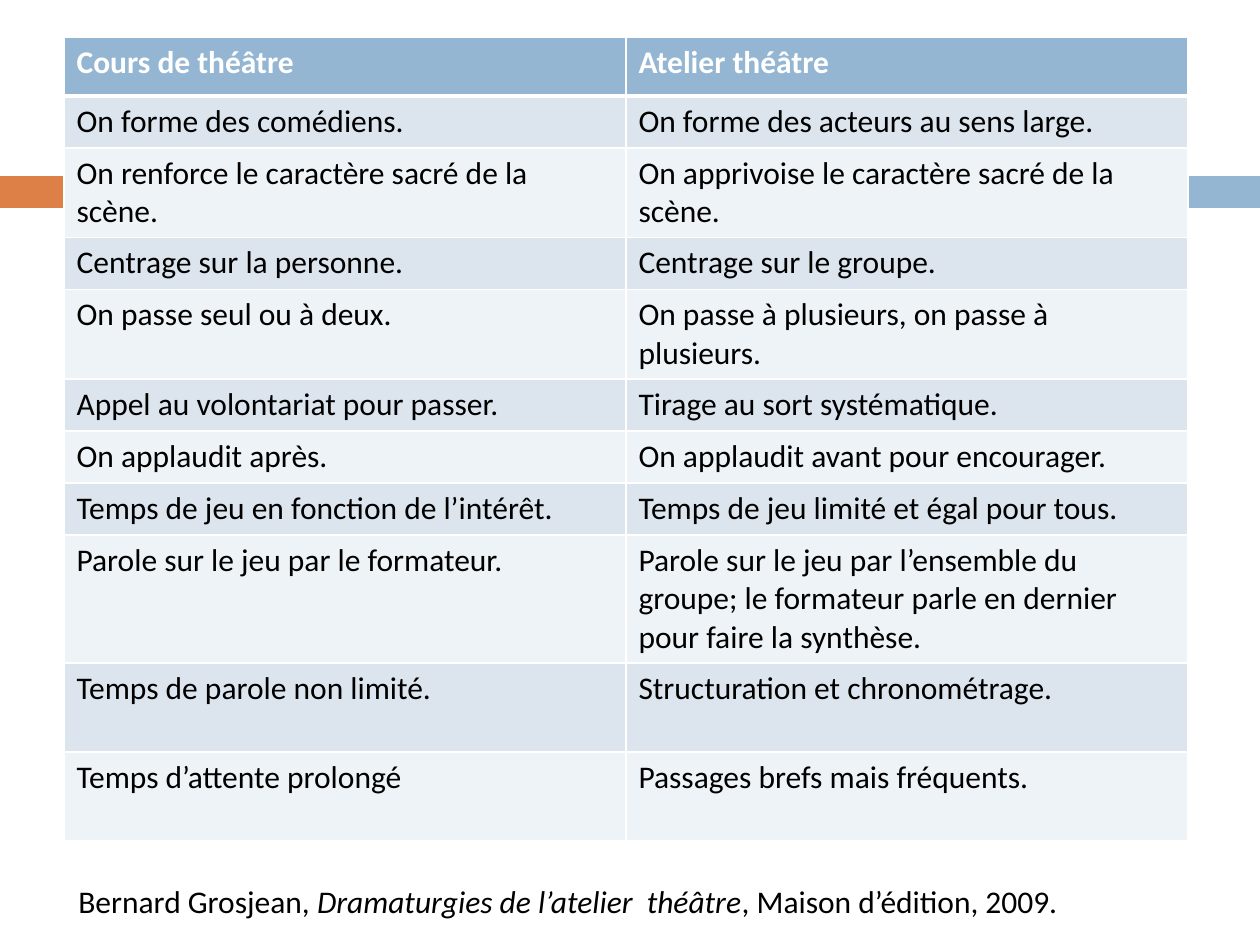
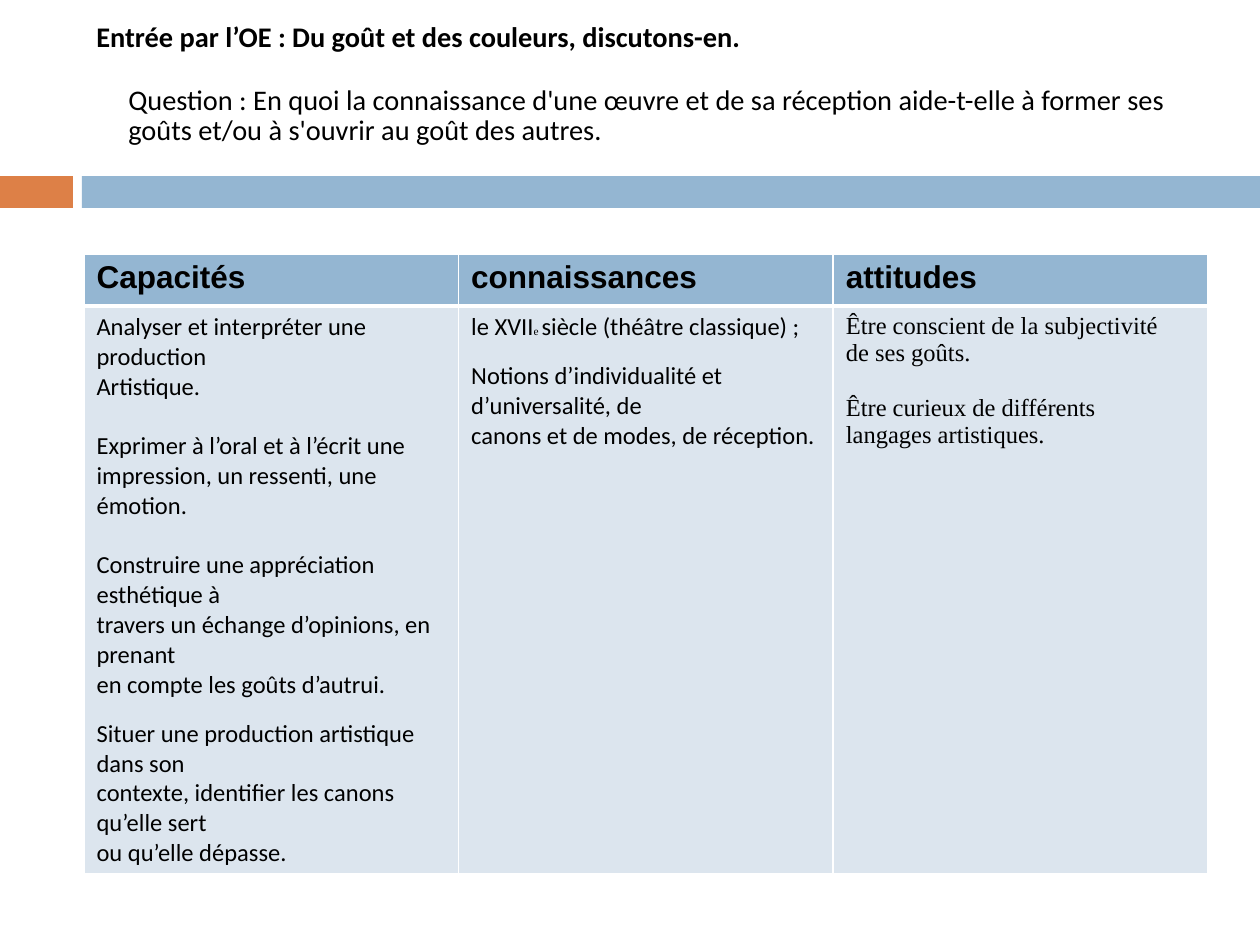
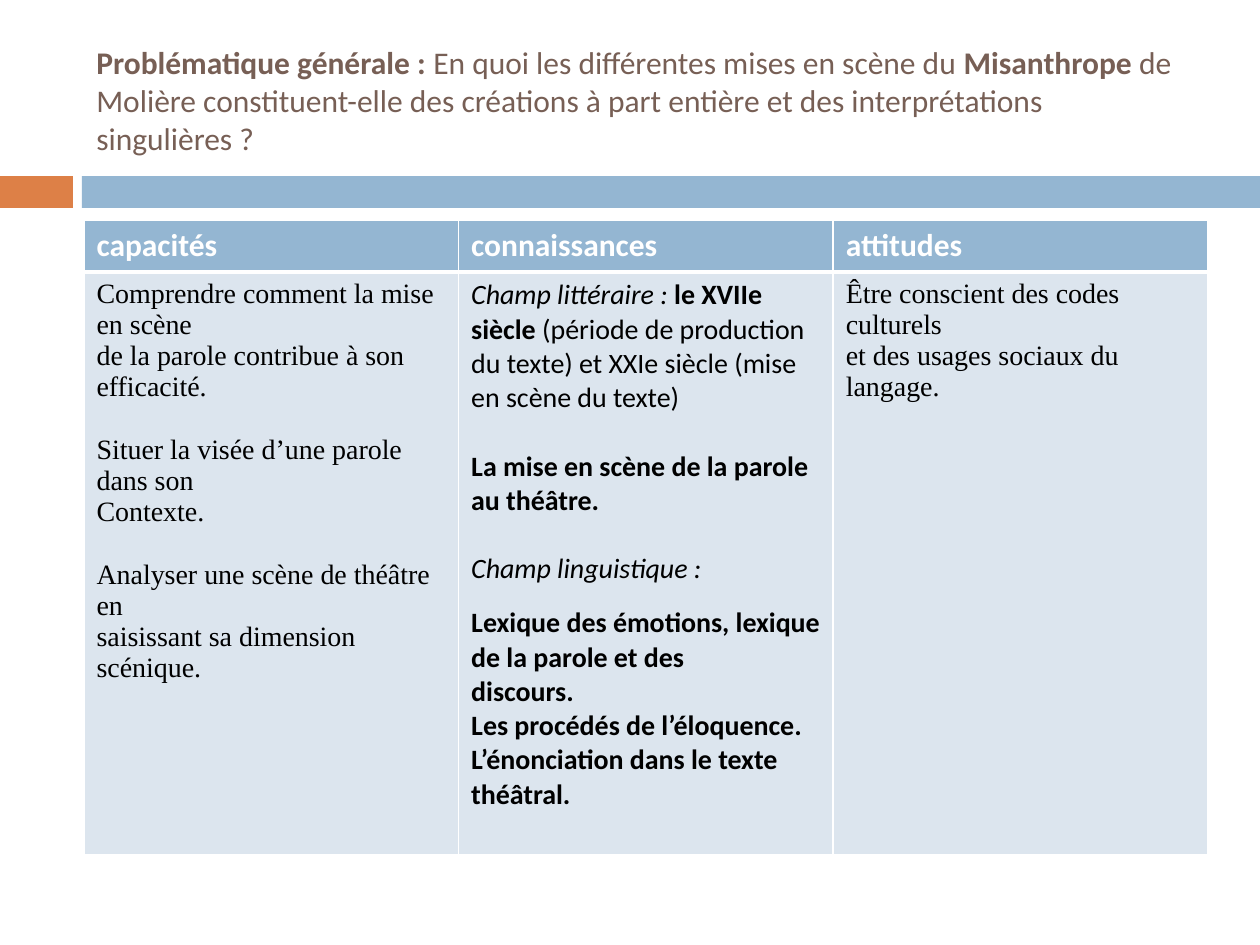
from lxml.etree import SubElement
from pptx import Presentation
from pptx.dml.color import RGBColor
from pptx.enum.shapes import MSO_SHAPE
from pptx.enum.text import MSO_ANCHOR
from pptx.oxml.ns import qn
from pptx.util import Pt

PX = 914400 // 126
WIDTH, HEIGHT = 1260, 945

ORANGE = RGBColor(0xDD, 0x80, 0x47)
BLUE = RGBColor(0x94, 0xB6, 0xD2)
PALE = RGBColor(0xDC, 0xE5, 0xEE)
PALER = RGBColor(0xEE, 0xF3, 0xF7)
BROWN = RGBColor(0x77, 0x5F, 0x55)
WHITE = RGBColor(0xFF, 0xFF, 0xFF)
BLACK = RGBColor(0, 0, 0)

SANS, SERIF, ARIAL = "Calibri", "Times New Roman", "Arial"

BANDS = [(0, 73, ORANGE), (82, 1178, BLUE)]
BAND_TOP, BAND_HEIGHT = 176, 32
TITLE_BOX = (84, 32, 1124, 136)

# A run is a text, or (text, style, font, size) with the last two optional.
# A paragraph is one text or a list of runs.
COMPARISON = [
    ("Cours de théâtre", "Atelier théâtre"),
    ("On forme des comédiens.", "On forme des acteurs au sens large."),
    ("On renforce le caractère sacré de la scène.",
     "On apprivoise le caractère sacré de la scène."),
    ("Centrage sur la personne.", "Centrage sur le groupe."),
    ("On passe seul ou à deux.", "On passe à plusieurs, on passe à plusieurs."),
    ("Appel au volontariat pour passer.", "Tirage au sort systématique."),
    ("On applaudit après.", "On applaudit avant pour encourager."),
    ("Temps de jeu en fonction de l’intérêt.",
     "Temps de jeu limité et égal pour tous."),
    ("Parole sur le jeu par le formateur.",
     "Parole sur le jeu par l’ensemble du groupe; le formateur parle en dernier "
     "pour faire la synthèse."),
    ("Temps de parole non limité.", "Structuration et chronométrage."),
    ("Temps d’attente prolongé", "Passages brefs mais fréquents."),
]
COMPARISON_ROWS = [59, 52, 88, 52, 88, 52, 52, 52, 128, 89, 89]
REFERENCE = ["Bernard Grosjean, ", ("Dramaturgies de l’atelier  théâtre", "i"),
             ", Maison d’édition, 2009."]

ENTRY = [("Entrée par l’OE : Du goût et des couleurs, discutons-en.", "b")]
QUESTION = ("Question : En quoi la connaissance d'une œuvre et de sa réception "
            "aide-t-elle à former ses goûts et/ou à s'ouvrir au goût des autres.")
PROBLEM = [("Problématique générale : ", "b"),
           "En quoi les différentes mises en scène du ", ("Misanthrope", "b"),
           " de Molière constituent-elle des créations à part entière et des "
           "interprétations singulières ?"]

# Skill columns: heading, font, size, then groups of (gap before in points, paragraphs)
TASTE_COLUMNS = [
    ("Capacités", SANS, 14, [
        (0, ["Analyser et interpréter une production", "Artistique."]),
        (17, ["Exprimer à l’oral et à l’écrit une",
              "impression, un ressenti, une émotion."]),
        (17, ["Construire une appréciation esthétique à",
              "travers un échange d’opinions, en prenant",
              "en compte les goûts d’autrui."]),
        (11, ["Situer une production artistique dans son",
              "contexte, identifier les canons qu’elle sert",
              "ou qu’elle dépasse."])]),
    ("connaissances", SANS, 14, [
        (0, [["le XVII", ("e ", "", SERIF, 6.5), "siècle (théâtre classique) ;"]]),
        (11, ["Notions d’individualité et d’universalité, de",
              "canons et de modes, de réception."])]),
    ("attitudes", SERIF, 14, [
        (0, ["Être conscient de la subjectivité", "de ses goûts."]),
        (16, ["Être curieux de différents", "langages artistiques."])]),
]
STAGE_COLUMNS = [
    ("capacités", SERIF, 16, [
        (0, ["Comprendre comment la mise en scène",
             "de la parole contribue à son efficacité."]),
        (18, ["Situer la visée d’une parole dans son", "Contexte."]),
        (18, ["Analyser une scène de théâtre en",
              "saisissant sa dimension scénique."])]),
    ("connaissances", SANS, 16, [
        (0, [[("Champ littéraire : ", "i"), ("le XVIIe siècle", "b"),
              " (période de production du texte) et XXIe siècle "
              "(mise en scène du texte)"]]),
        (19.5, [[("La mise en scène de la parole au théâtre.", "b")]]),
        (19.5, [[("Champ linguistique :", "i")]]),
        (11.5, [[(text, "b")] for text in (
            "Lexique des émotions, lexique de la parole et des", "discours.",
            "Les procédés de l’éloquence.",
            "L’énonciation dans le texte théâtral.")])]),
    ("attitudes", SERIF, 16, [
        (0, ["Être conscient des codes culturels",
             "et des usages sociaux du langage."])]),
]


def px(*lengths):
    return [n * PX for n in lengths]


def write(p, runs, font=SANS, size=18, color=BLACK):
    for run in [runs] if isinstance(runs, str) else runs:
        text, style, *own = (run, "") if isinstance(run, str) else run
        run_font, run_size = own or (font, size)
        r = p.add_run()
        r.text = text
        r.font.name, r.font.size = run_font, Pt(run_size)
        r.font.color.rgb = color
        r.font.bold, r.font.italic = "b" in style, "i" in style


def write_groups(tf, groups, font, size):
    p = tf.paragraphs[0]
    for gap, paragraphs in groups:
        for n, runs in enumerate(paragraphs):
            if p.runs:
                p = tf.add_paragraph()
            if n == 0:
                p.space_before = Pt(gap)
            write(p, runs, font, size)


def add_text(s, box):
    tf = s.shapes.add_textbox(*px(*box)).text_frame
    tf.word_wrap = True
    return tf


def add_title(s):
    tf = add_text(s, TITLE_BOX)
    tf.vertical_anchor = MSO_ANCHOR.MIDDLE
    return tf


def paint_cell(cell, fill, top, bottom):
    """Fill a cell and give it white borders, top and bottom in points."""
    tcPr = cell._tc.get_or_add_tcPr()
    for side, width in (("L", 1), ("R", 1), ("T", top), ("B", bottom)):
        ln = SubElement(tcPr, qn(f"a:ln{side}"), w=str(Pt(width)))
        SubElement(SubElement(ln, qn("a:solidFill")), qn("a:srgbClr"), val=str(WHITE))
    cell.fill.solid()
    cell.fill.fore_color.rgb = fill


def add_grid(s, left, top, width, columns, heights):
    """Add a table with equal columns, a heading row and alternating fills."""
    table = s.shapes.add_table(len(heights), columns,
                               *px(left, top, width, sum(heights))).table
    for column in table.columns:
        column.width = width * PX // columns
    for i, height in enumerate(heights):
        table.rows[i].height = height * PX
        fill = BLUE if i == 0 else (PALER, PALE)[i % 2]
        for cell in table.rows[i].cells:
            paint_cell(cell, fill, 3 if i == 1 else 1, 3 if i == 0 else 1)
    return table


def add_skills(s, top, body_height, columns, heading_font, heading_color):
    table = add_grid(s, 84, top, 1124, len(columns), [52, body_height])
    for j, (heading, font, size, groups) in enumerate(columns):
        write(table.cell(0, j).text_frame.paragraphs[0], [(heading, "b")],
              heading_font, color=heading_color)
        write_groups(table.cell(1, j).text_frame, groups, font, size)


def add_slide(prs):
    s = prs.slides.add_slide(prs.slide_layouts[6])
    for left, width, color in BANDS:
        sp = s.shapes.add_shape(MSO_SHAPE.RECTANGLE,
                                *px(left, BAND_TOP, width, BAND_HEIGHT))
        sp.shadow.inherit = False
        sp.fill.solid()
        sp.fill.fore_color.rgb = color
        sp.line.fill.background()
    return s


def comparison_slide(prs):
    s = add_slide(prs)
    table = add_grid(s, 64, 37, 1124, 2, COMPARISON_ROWS)
    for i, row in enumerate(COMPARISON):
        for j, text in enumerate(row):
            write(table.cell(i, j).text_frame.paragraphs[0],
                  text if i else [(text, "b")], color=BLACK if i else WHITE)
    write(add_text(s, (66, 876, 1142, 50)).paragraphs[0], REFERENCE)


def taste_slide(prs):
    s = add_slide(prs)
    tf = add_title(s)
    tf.margin_bottom = 36 * PX
    question = tf.add_paragraph()
    question.space_before = Pt(18)
    for p, runs, indent in ((tf.paragraphs[0], ENTRY, -32), (question, QUESTION, 0)):
        p.line_spacing = 0.9
        pPr = p._p.get_or_add_pPr()
        pPr.set("marL", str(32 * PX))
        pPr.set("indent", str(indent * PX))
        write(p, runs, size=16.2)
    add_skills(s, 254, 568, TASTE_COLUMNS, ARIAL, BLACK)


def stage_slide(prs):
    s = add_slide(prs)
    write(add_title(s).paragraphs[0], PROBLEM, color=BROWN)
    add_skills(s, 220, 583, STAGE_COLUMNS, SANS, WHITE)


def main():
    prs = Presentation()
    prs.slide_width, prs.slide_height = px(WIDTH, HEIGHT)
    comparison_slide(prs)
    taste_slide(prs)
    stage_slide(prs)
    prs.save("out.pptx")


if __name__ == "__main__":
    main()
